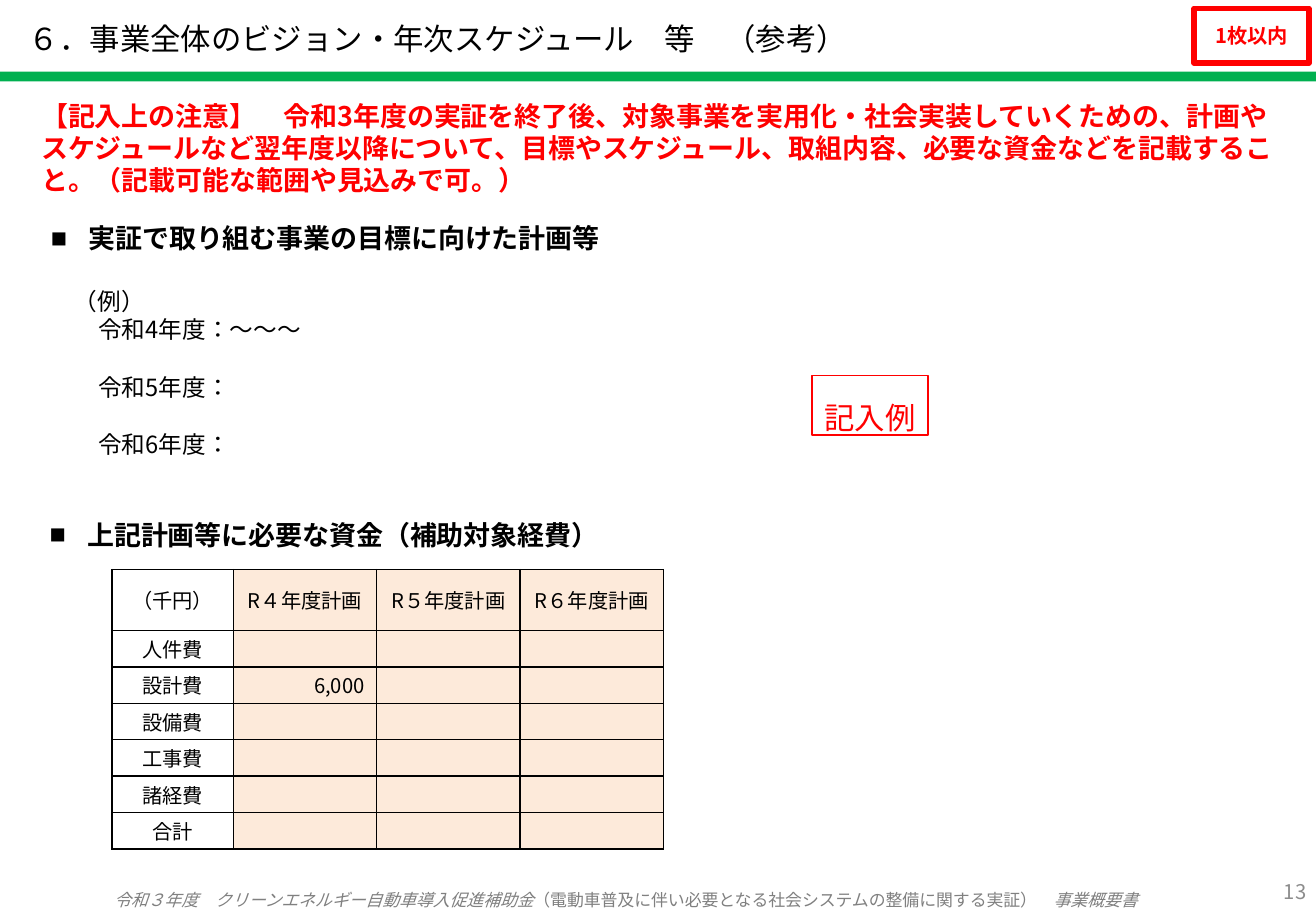
from lxml.etree import SubElement
from pptx import Presentation
from pptx.dml.color import RGBColor
from pptx.enum.lang import MSO_LANGUAGE_ID as LANG
from pptx.enum.shapes import MSO_SHAPE as SHAPE
from pptx.enum.text import MSO_ANCHOR as ANCHOR, PP_ALIGN as ALIGN
from pptx.oxml.ns import qn
from pptx.util import Inches, Pt

FONT = "Noto Sans CJK JP"
COLORS = {"black": "000000", "white": "FFFFFF", "red": "FF0000", "green": "00B050",
          "peach": "FDEADA", "footer": "808080", "number": "8C8C8C"}

TITLE = "６．事業全体のビジョン・年次スケジュール　等　（参考）"
LIMIT = "1枚以内"
NOTE = ("【記入上の注意】　令和3年度の実証を終了後、対象事業を実用化・社会実装していくための、"
        "計画やスケジュールなど翌年度以降について、目標やスケジュール、取組内容、"
        "必要な資金などを記載すること。（記載可能な範囲や見込みで可。）")
PLAN_HEADING = "実証で取り組む事業の目標に向けた計画等"
PLAN_LABEL = "（例）"
PLAN_YEARS = ["令和4年度：～～～", "令和5年度：", "令和6年度："]
FUNDS_HEADING = "上記計画等に必要な資金（補助対象経費）"
SAMPLE = "記入例"
FUNDS = [
    ["（千円）", "R４年度計画", "R５年度計画", "R６年度計画"],
    ["人件費", "", "", ""],
    ["設計費", "6,000", "", ""],
    ["設備費", "", "", ""],
    ["工事費", "", "", ""],
    ["諸経費", "", "", ""],
    ["合計", "", "", ""],
]
FOOTER = [("令和３年度　クリーンエネルギー自動車導入促進補助金", True),
          ("（電動車普及に伴い必要となる社会システムの整備に関する実証）", False),
          ("　事業概要書", True)]
PAGE = "13"

LABEL_COL, YEAR_COL = 1, 1.18
HEAD_ROW, ITEM_ROW = 0.5, 0.3

prs = Presentation()
prs.slide_width, prs.slide_height = Inches(10.83), Inches(7.5)
s = prs.slides.add_slide(prs.slide_layouts[6])


def rgb(name):
    return RGBColor.from_string(COLORS[name])


def write(p, text, size=16, color="black", bold=False, italic=False,
          align=ALIGN.LEFT, line=None, before=0, indent=0, bullet=None):
    """Add one formatted run to a paragraph."""
    p.alignment = align
    if line:
        p.line_spacing = Pt(line)
    if before:
        p.space_before = Pt(before)
    pPr = p._p.get_or_add_pPr()
    if indent:
        pPr.set("marL", str(Inches(indent)))
    if bullet:
        pPr.set("indent", str(-Inches(indent)))
        SubElement(pPr, qn("a:buFont"), typeface="Arial")
        SubElement(pPr, qn("a:buChar"), char=bullet)
    if not text:
        SubElement(p._p, qn("a:endParaRPr"), sz=str(size * 100))
        return
    r = p.add_run()
    r.text = text
    f = r.font
    f.size, f.bold, f.italic = Pt(size), bold, italic
    f.color.rgb = rgb(color)
    f.name = FONT
    f.language_id = LANG.JAPANESE
    SubElement(r._r.get_or_add_rPr(), qn("a:ea"), typeface=FONT)


def text_box(left, top, width, height, anchor=ANCHOR.TOP):
    tf = s.shapes.add_textbox(*map(Inches, (left, top, width, height))).text_frame
    tf.word_wrap = True
    tf.vertical_anchor = anchor
    return tf


def rect(left, top, width, height, fill, line=None, line_width=1):
    sp = s.shapes.add_shape(SHAPE.RECTANGLE, *map(Inches, (left, top, width, height)))
    sp.shadow.inherit = False
    sp.fill.solid()
    sp.fill.fore_color.rgb = rgb(fill)
    if line:
        sp.line.color.rgb = rgb(line)
        sp.line.width = Pt(line_width)
    else:
        sp.line.fill.background()
    return sp.text_frame


def set_borders(cell):
    tcPr = cell._tc.get_or_add_tcPr()
    for i, side in enumerate(("lnL", "lnR", "lnT", "lnB")):
        ln = tcPr.makeelement(qn(f"a:{side}"), {"w": str(Pt(1))})
        fill = SubElement(ln, qn("a:solidFill"))
        SubElement(fill, qn("a:srgbClr"), val=COLORS["black"])
        tcPr.insert(i, ln)


# Header and footer
tf = text_box(0, 7.32, 10.3, 0.18, ANCHOR.MIDDLE)
tf.margin_top = tf.margin_bottom = 0
for text, italic in FOOTER:
    write(tf.paragraphs[0], text, size=10, color="footer", italic=italic, align=ALIGN.CENTER)
rect(-0.01, 0.59, 10.84, 0.08, "green")
write(text_box(0.14, 0.04, 7.8, 0.55, ANCHOR.MIDDLE).paragraphs[0], TITLE, size=18)
tf = rect(9.83, 0.07, 0.94, 0.45, "white", "red", 3.5)
tf.vertical_anchor = ANCHOR.MIDDLE
write(tf.paragraphs[0], LIMIT, size=12, color="red", bold=True, align=ALIGN.CENTER)
write(text_box(9.71, 7.19, 1.14, 0.28).paragraphs[0], PAGE,
      size=12, color="number", align=ALIGN.RIGHT)

# Instructions and plan
write(text_box(0.24, 0.77, 10.38, 0.7).paragraphs[0], NOTE, color="red", bold=True, line=19)
heading = dict(bold=True, line=19, indent=0.31, bullet="■")
tf = text_box(0.32, 1.78, 8.64, 2.12)
write(tf.paragraphs[0], PLAN_HEADING, **heading)
write(tf.add_paragraph(), PLAN_LABEL, size=14, line=17, before=19, indent=0.19)
for i, year in enumerate(PLAN_YEARS):
    write(tf.add_paragraph(), year, size=14, line=17, before=17 if i else 0, indent=0.39)

# Required funds
write(text_box(0.31, 4.22, 9.92, 0.37).paragraphs[0], FUNDS_HEADING, **heading)
n_rows, n_cols = len(FUNDS), len(FUNDS[0])
col_widths = [LABEL_COL] + [YEAR_COL] * (n_cols - 1)
row_heights = [HEAD_ROW] + [ITEM_ROW] * (n_rows - 1)
table = s.shapes.add_table(n_rows, n_cols, Inches(0.92), Inches(4.69),
                           Inches(sum(col_widths)), Inches(sum(row_heights))).table
for col, width in zip(table.columns, col_widths):
    col.width = Inches(width)
for i, values in enumerate(FUNDS):
    table.rows[i].height = Inches(row_heights[i])
    for j, value in enumerate(values):
        cell = table.cell(i, j)
        cell.vertical_anchor = ANCHOR.MIDDLE
        cell.margin_top = cell.margin_bottom = 0
        cell.margin_left = cell.margin_right = Inches(0.1 if i else 0.12)
        if j:
            cell.fill.solid()
            cell.fill.fore_color.rgb = rgb("peach")
        else:
            cell.fill.background()
        set_borders(cell)
        write(cell.text_frame.paragraphs[0], value, size=12,
              align=ALIGN.RIGHT if i and j else ALIGN.CENTER)

# Sample tag
tf = rect(6.68, 3.09, 0.96, 0.49, "white", "red")
tf.word_wrap = False
tf.vertical_anchor = ANCHOR.TOP
tf.margin_top, tf.margin_bottom = Inches(0.05), 0
write(tf.paragraphs[0], SAMPLE, size=18, color="red", align=ALIGN.CENTER, line=32)

prs.save("out.pptx")
